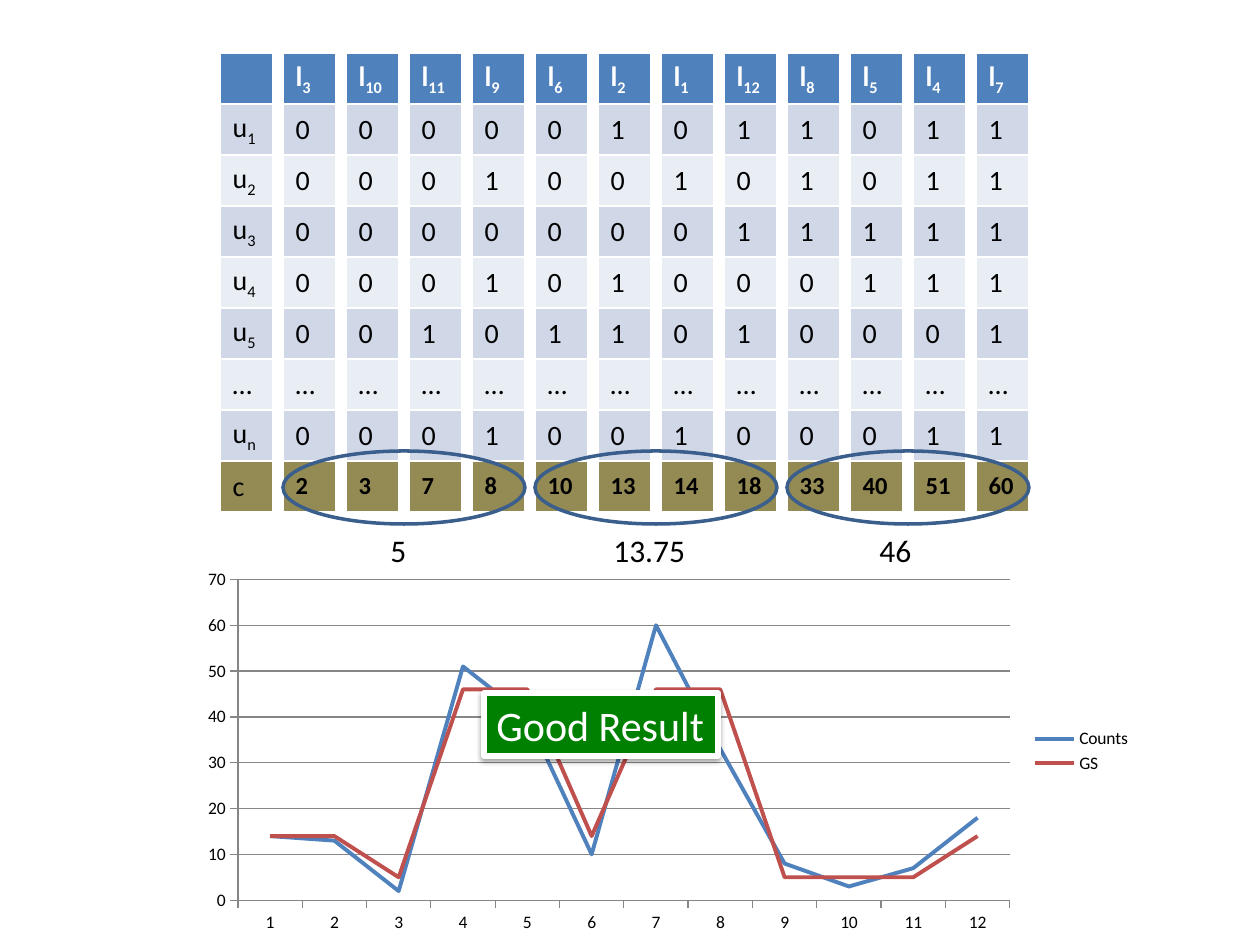
from lxml import etree
from pptx import Presentation
from pptx.chart.data import CategoryChartData
from pptx.dml.color import RGBColor
from pptx.enum.chart import XL_CHART_TYPE, XL_LEGEND_POSITION, XL_TICK_MARK
from pptx.enum.shapes import MSO_SHAPE
from pptx.enum.text import MSO_ANCHOR, MSO_AUTO_SIZE, PP_ALIGN
from pptx.oxml.ns import qn
from pptx.util import Emu, Pt

LINE = XL_CHART_TYPE.LINE
LEGEND_RIGHT = XL_LEGEND_POSITION.RIGHT
TICK_OUT = XL_TICK_MARK.OUTSIDE
ELLIPSE, RECTANGLE = MSO_SHAPE.OVAL, MSO_SHAPE.RECTANGLE
MIDDLE, LEFT = MSO_ANCHOR.MIDDLE, PP_ALIGN.LEFT
FIT_SHAPE = MSO_AUTO_SIZE.SHAPE_TO_FIT_TEXT

EMU_PER_PX = 914400 / 126
FONT = "Calibri"
COLORS = {
    "header": "4F81BD", "band_dark": "D0D8E8", "band_light": "E9EDF4",
    "total": "948A54", "ring": "3A5F8C", "grid": "868686",
    "counts": "4F81BD", "gs": "C0504D", "verdict": "008000",
    "white": "FFFFFF", "black": "000000",
}
USERS = ["1", "2", "3", "4", "5", "…", "n"]
ITEMS = [
    (3, "00000…0", 2), (10, "00000…0", 3), (11, "00001…0", 7), (9, "01010…1", 8),
    (6, "00001…0", 10), (2, "10011…0", 13), (1, "01000…1", 14), (12, "10101…0", 18),
    (8, "11100…0", 33), (5, "00110…0", 40), (4, "11110…1", 51), (7, "11111…1", 60),
]
GROUP_SIZE = 4
GROUPS = [ITEMS[i:i + GROUP_SIZE] for i in range(0, len(ITEMS), GROUP_SIZE)]
MEANS = [sum(count for _, _, count in group) / GROUP_SIZE for group in GROUPS]


def px(length):
    """Turn px into EMU."""
    return Emu(round(length * EMU_PER_PX))


def rgb(name):
    """Look up a named colour."""
    return RGBColor.from_string(COLORS[name])


def style_font(font, size, color="black", bold=False):
    """Set the face, size, colour and weight of a font."""
    font.name, font.size, font.bold = FONT, Pt(size), bold
    font.color.rgb = rgb(color)


def add_column(slide, left, top, width, row_height, entries, total_size, total_bold):
    """Place one table column whose entries are (text, subscript) pairs."""
    column = slide.shapes.add_table(
        len(entries), 1, px(left), px(top), px(width), px(row_height * len(entries))).table
    last = len(entries) - 1
    for row, (text, subscript) in enumerate(entries):
        cell = column.cell(row, 0)
        cell.vertical_anchor = MIDDLE
        cell.fill.solid()
        band = "band_dark" if row % 2 else "band_light"
        cell.fill.fore_color.rgb = rgb({0: "header", last: "total"}.get(row, band))
        if not text:
            continue
        paragraph = cell.text_frame.paragraphs[0]
        style_font(paragraph.font, total_size if row == last else 16,
                   "black" if row else "white", row == 0 or (row == last and total_bold))
        paragraph.add_run().text = text
        if subscript:
            index = paragraph.add_run()
            index.text = subscript
            index.font._element.set("baseline", "-25000")


def add_matrix(slide, left, top, pitch, width, row_height):
    """Place the user column and the item columns sorted by count."""
    users = [("…", "") if user == "…" else ("u", user) for user in USERS]
    add_column(slide, left, top, width, row_height, [("", ""), *users, ("c", "")], 16, False)
    for position, (item, ratings, count) in enumerate(ITEMS, 1):
        entries = [("l", str(item)), *((rating, "") for rating in ratings), (str(count), "")]
        add_column(slide, left + position * pitch, top, width, row_height, entries, 14, True)


def add_groups(slide, left, top, pitch, width, height):
    """Ring each group of counts and write its mean below."""
    for number, (mean, label_left, label_width) in enumerate(
            zip(MEANS, (95, 66, 80), (42, 98, 58))):
        group_left = left + number * pitch
        ring = slide.shapes.add_shape(
            ELLIPSE, px(group_left), px(top), px(width), px(height))
        ring.shadow.inherit = False
        ring.fill.background()
        ring.line.color.rgb = rgb("ring")
        ring.line.width = Pt(2)
        label = slide.shapes.add_textbox(
            px(group_left + label_left), px(top + height + 1), px(label_width), px(50))
        label.text_frame.word_wrap = False
        label.text_frame.auto_size = FIT_SHAPE
        paragraph = label.text_frame.paragraphs[0]
        paragraph.text = f"{mean:g}"
        style_font(paragraph.font, 18)


def add_count_chart(slide, left, top, width, height):
    """Chart the item counts against their rounded group means."""
    counts = {item: count for item, _, count in ITEMS}
    smoothed = {item: round(mean) for group, mean in zip(GROUPS, MEANS) for item, _, _ in group}
    items = sorted(counts)
    data = CategoryChartData()
    data.categories = [str(item) for item in items]
    data.add_series("Counts", [counts[item] for item in items])
    data.add_series("GS", [smoothed[item] for item in items])
    chart = slide.shapes.add_chart(
        LINE, px(left), px(top), px(width), px(height), data).chart
    style_font(chart.font, 10)
    chart.has_title = False
    chart.has_legend = True
    chart.legend.position = LEGEND_RIGHT
    chart.legend.include_in_layout = False
    plot = chart.plots[0]
    plot.vary_by_categories = False
    for series, color in zip(plot.series, ("counts", "gs")):
        series.smooth = False
        series.format.line.color.rgb = rgb(color)
        series.format.line.width = Pt(2.25)
    for axis in (chart.category_axis, chart.value_axis):
        axis.major_tick_mark = TICK_OUT
        axis.format.line.color.rgb = rgb("grid")
    values = chart.value_axis
    values.minimum_scale, values.maximum_scale, values.major_unit = 0, 70, 10
    values.has_major_gridlines = True
    values.major_gridlines.format.line.color.rgb = rgb("grid")


def add_verdict(slide, left, top, width, height):
    """Place the shadowed verdict box."""
    verdict = slide.shapes.add_shape(RECTANGLE, px(left), px(top), px(width), px(height))
    verdict.shadow.inherit = False
    verdict.fill.solid()
    verdict.fill.fore_color.rgb = rgb("verdict")
    verdict.line.color.rgb = rgb("white")
    verdict.line.width = Pt(3)
    effects = verdict._element.spPr.find(qn("a:effectLst"))
    shadow = etree.SubElement(
        effects, qn("a:outerShdw"), blurRad=str(Pt(3.1)), dist=str(Pt(1.6)),
        dir="5400000", rotWithShape="0")
    shade = etree.SubElement(shadow, qn("a:srgbClr"), val=COLORS["black"])
    etree.SubElement(shade, qn("a:alpha"), val="38000")
    frame = verdict.text_frame
    frame.word_wrap = False
    frame.auto_size = FIT_SHAPE
    paragraph = frame.paragraphs[0]
    paragraph.text = "Good Result"
    paragraph.alignment = LEFT
    style_font(paragraph.font, 24, "white")


def main():
    """Build and save the slide."""
    deck = Presentation()
    deck.slide_width, deck.slide_height = px(1260), px(945)
    slide = deck.slides.add_slide(deck.slide_layouts[6])
    add_matrix(slide, left=220, top=53, pitch=63, width=53, row_height=51)
    add_groups(slide, left=283, top=451, pitch=252, width=242, height=73)
    add_count_chart(slide, left=189, top=562, width=955, height=378)
    add_verdict(slide, left=484, top=693, width=234, height=63)
    deck.save("out.pptx")


if __name__ == "__main__":
    main()
